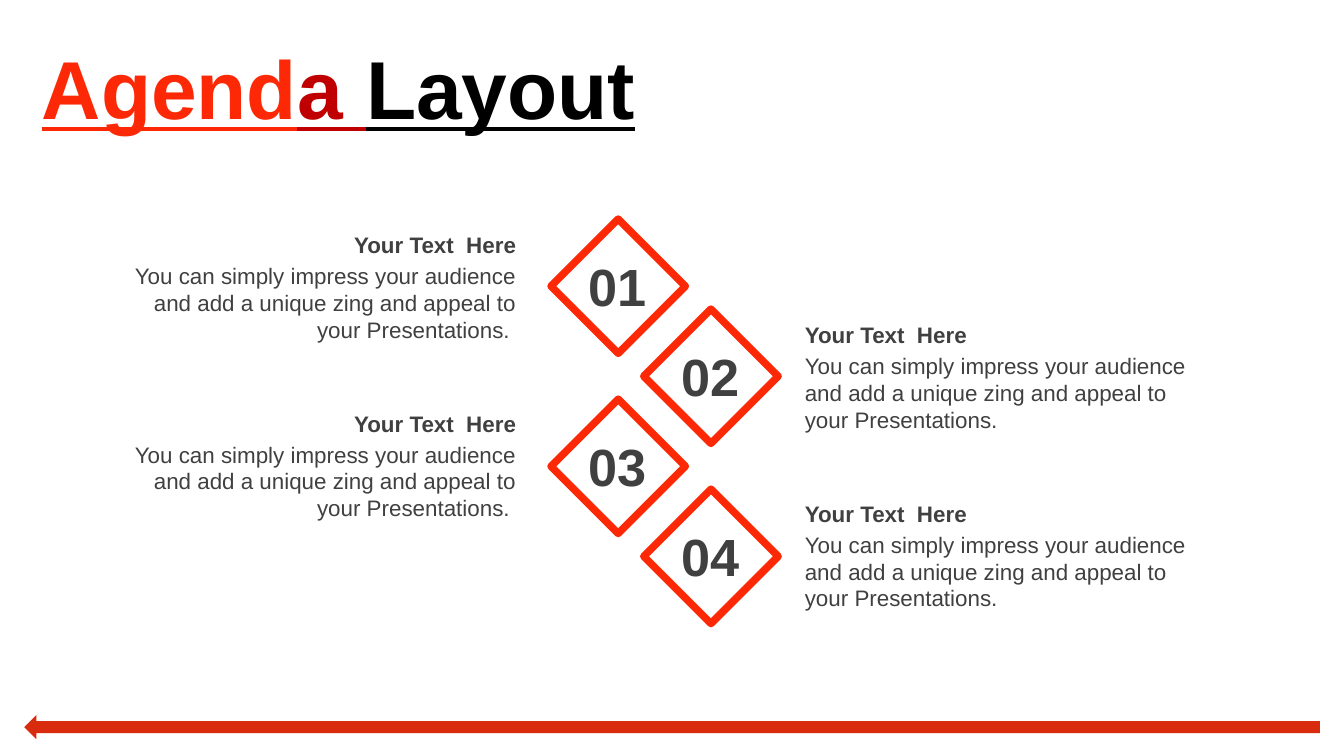
from dataclasses import dataclass

from lxml import etree
from pptx import Presentation
from pptx.dml.color import RGBColor
from pptx.enum.shapes import MSO_SHAPE
from pptx.enum.text import MSO_ANCHOR, MSO_AUTO_SIZE, PP_ALIGN
from pptx.oxml.ns import qn
from pptx.util import Inches, Pt

DIAMOND, ARROW = MSO_SHAPE.DIAMOND, MSO_SHAPE.RIGHT_ARROW
LEFT, RIGHT, CENTER = PP_ALIGN.LEFT, PP_ALIGN.RIGHT, PP_ALIGN.CENTER
MIDDLE = MSO_ANCHOR.MIDDLE
GROW, FIXED = MSO_AUTO_SIZE.SHAPE_TO_FIT_TEXT, MSO_AUTO_SIZE.NONE


@dataclass(frozen=True)
class Theme:
    font: str = "Arial"
    red: str = "FD2906"
    dark: str = "C00000"
    black: str = "000000"
    gray: str = "404040"
    bar: str = "D92B0D"
    title: int = 44
    number: int = 28
    body: int = 12
    line: int = 4


theme = Theme()


def add_text(shapes, box, runs, size, align=LEFT, wrap=True, **style):
    """Add a text box; runs is a list of (text, colour) pairs."""
    frame = shapes.add_textbox(*map(Inches, box)).text_frame
    frame.word_wrap = wrap
    frame.auto_size = GROW
    para = frame.paragraphs[0]
    para.alignment = align
    for text, color in runs:
        run = para.add_run()
        run.text = text
        font = {"name": theme.font, "size": Pt(size), **style}
        for key, value in font.items():
            setattr(run.font, key, value)
        run.font.color.rgb = RGBColor.from_string(color)
    return frame


deck = Presentation()
deck.slide_width = Inches(10)
deck.slide_height = deck.slide_width * 9 // 16
slide = deck.slides.add_slide(deck.slide_layouts[6])

# Title
title = [("Agend", theme.red), ("a ", theme.dark), ("Layout", theme.black)]
frame = add_text(slide.shapes, (-2.48, 0.21, 10, 0.97), title, theme.title,
                 CENTER, bold=True, underline=True)
frame.auto_size = FIXED
frame.vertical_anchor = MIDDLE
frame.paragraphs[0].line_spacing = 0.9

# Numbered diamonds, zigzagging down the middle
for i in range(4):
    x, y = 4.1 + 0.69 * (i % 2), 1.63 + 0.67 * i
    group = slide.shapes.add_group_shape().shapes
    gem = group.add_shape(DIAMOND, *map(Inches, (x, y, 1, 1)))
    gem.shadow.inherit = False
    gem.fill.background()
    gem.line.color.rgb = RGBColor.from_string(theme.red)
    gem.line.width = Pt(theme.line)
    etree.SubElement(gem.line.fill._xPr, qn("a:round"))
    add_text(group, (x + 0.18, y + 0.21, 0.64, 0.57),
             [(f"{i + 1:02}", theme.gray)], theme.number, wrap=False, bold=True)

# Agenda entries: odd ones on the left, even ones on the right
head = "Your Text  Here"
body = ("You can simply impress your audience and add a unique zing "
        "and appeal to your Presentations.")
sides = [(0.68, RIGHT, body + " "), (5.89, LEFT, body)]
for i in (0, 2, 1, 3):
    x, align, text = sides[i % 2]
    y = 1.67 + 0.67 * (i % 2) + 1.33 * (i // 2)
    group = slide.shapes.add_group_shape().shapes
    add_text(group, (x, y + 0.23, 3.26, 0.71), [(text, theme.gray)],
             theme.body, align)
    add_text(group, (x, y, 3.26, 0.3), [(head, theme.gray)],
             theme.body, align, bold=True)

# Footer arrow pointing left
arrow = slide.shapes.add_shape(ARROW, *map(Inches, (0.18, 5.32, 9.64, 0.18)))
arrow.rotation = 180
arrow.shadow.inherit = False
arrow.fill.solid()
arrow.fill.fore_color.rgb = RGBColor.from_string(theme.bar)
arrow.line.fill.background()

deck.save("out.pptx")
